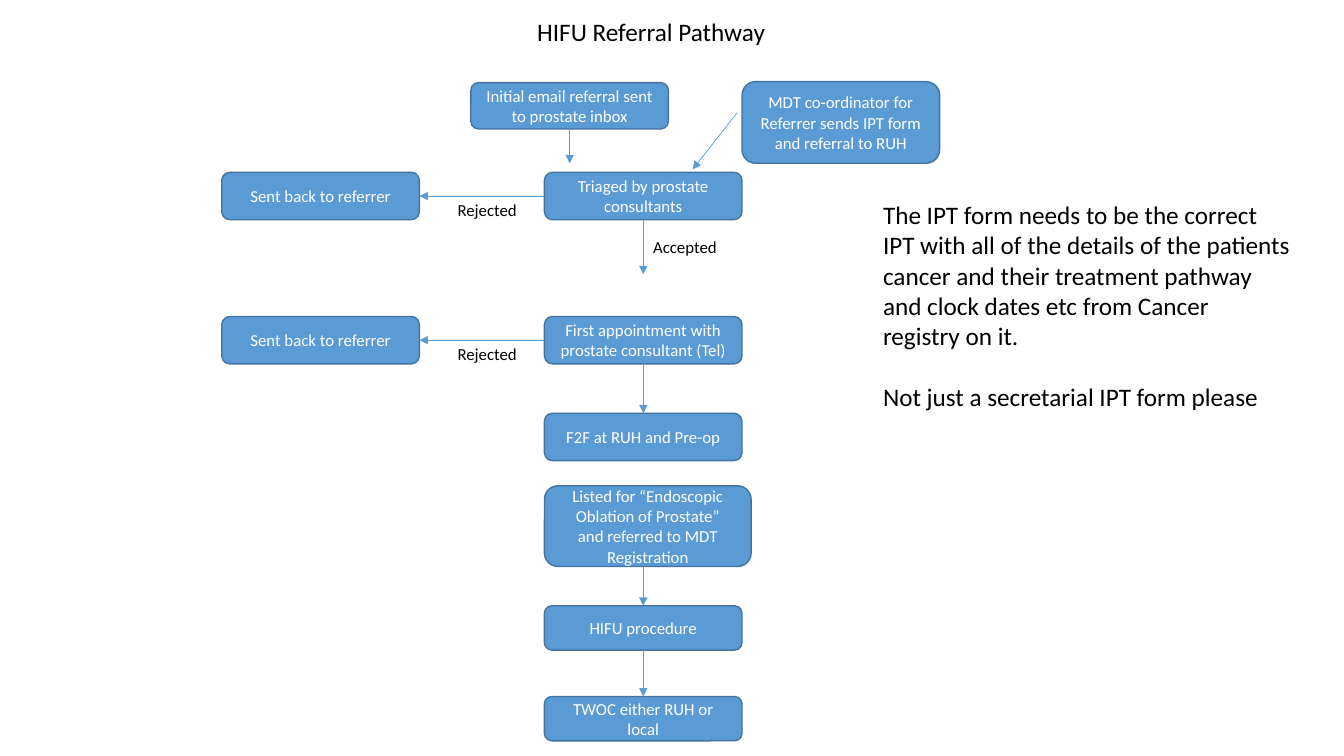
from lxml.etree import SubElement
from pptx import Presentation
from pptx.dml.color import RGBColor
from pptx.enum.shapes import MSO_CONNECTOR, MSO_SHAPE
from pptx.enum.text import MSO_ANCHOR, MSO_AUTO_SIZE, PP_ALIGN
from pptx.oxml.ns import qn
from pptx.util import Inches, Pt

BLUE = RGBColor(0x5B, 0x9B, 0xD5)
EDGE = RGBColor(0x43, 0x73, 0x9E)
WHITE = RGBColor(0xFF, 0xFF, 0xFF)
BLACK = RGBColor(0x00, 0x00, 0x00)
FONT = "Calibri"
TOP, LEFT, BOTTOM, RIGHT = range(4)
MAIN, BACK = 5.4, 2.2  # left edges of the two columns
MID = 6.38  # axis of the main column
WIDE, HIGH = 1.96, 0.47


def write(frame, text, size=12, color=BLACK, align=PP_ALIGN.LEFT, gap=0):
    """Fill a frame, one paragraph per line of text, gap points apart."""
    for i, line in enumerate(text.split("\n")):
        para = frame.add_paragraph() if i else frame.paragraphs[0]
        para.alignment = align
        if i and gap:
            para.space_before = Pt(gap)
        run = para.add_run()
        run.text = line
        run.font.name = FONT
        run.font.size = Pt(size)
        run.font.color.rgb = color


class Chart:
    """Draws the flow chart's elements on one slide."""

    def __init__(self, slide):
        self.shapes = slide.shapes

    def box(self, text, x, y, w=WIDE, h=HIGH):
        shape = self.shapes.add_shape(
            MSO_SHAPE.ROUNDED_RECTANGLE, Inches(x), Inches(y), Inches(w), Inches(h))
        shape.shadow.inherit = False
        shape.fill.solid()
        shape.fill.fore_color.rgb = BLUE
        shape.line.color.rgb = EDGE
        shape.line.width = Pt(1)
        frame = shape.text_frame
        frame.word_wrap = True
        frame.vertical_anchor = MSO_ANCHOR.MIDDLE
        write(frame, text, color=WHITE, align=PP_ALIGN.CENTER)
        return shape

    def label(self, text, x, y, w, h=0.3, wrap=False, **style):
        frame = self.shapes.add_textbox(
            Inches(x), Inches(y), Inches(w), Inches(h)).text_frame
        frame.word_wrap = wrap
        frame.auto_size = MSO_AUTO_SIZE.SHAPE_TO_FIT_TEXT
        write(frame, text, **style)

    def arrow(self, start, end):
        """Each end is a point (x, y) or a joint (shape, side)."""
        line = self.shapes.add_connector(MSO_CONNECTOR.STRAIGHT, 0, 0, 0, 0)
        if isinstance(start[0], float):
            line.begin_x, line.begin_y = map(Inches, start)
        else:
            line.begin_connect(*start)
        if isinstance(end[0], float):
            line.end_x, line.end_y = map(Inches, end)
        else:
            line.end_connect(*end)
        line.line.color.rgb = BLUE
        line.line.width = Pt(0.5)
        SubElement(line.line._get_or_add_ln(), qn("a:tailEnd"), type="triangle")
        SubElement(line._element.spPr, qn("a:effectLst"))


def main():
    deck = Presentation()
    deck.slide_width, deck.slide_height = Inches(13.33), Inches(7.5)
    chart = Chart(deck.slides.add_slide(deck.slide_layouts[6]))

    chart.label("HIFU Referral Pathway", 5.23, 0.11, 2.48, 0.4, size=18)
    email = chart.box("Initial email referral sent to prostate inbox", 4.67, 0.82, h=0.46)
    chart.box("MDT co-ordinator for Referrer sends IPT form and referral to RUH",
              7.36, 0.81, h=0.81)
    triage = chart.box("Triaged by prostate consultants", MAIN, 1.71)
    first = chart.box("First appointment with prostate consultant (Tel)", MAIN, 3.14)
    visit = chart.box("F2F at RUH and Pre-op", MAIN, 4.1)
    chart.box("Listed for “Endoscopic Oblation of Prostate”\n"
              "and referred to MDT Registration", MAIN, 4.82, 2.05, 0.8)
    hifu = chart.box("HIFU procedure", MAIN, 6.01, h=0.44)
    twoc = chart.box("TWOC either RUH or local", MAIN, 6.91, h=0.44)

    for step, y in ((triage, 1.71), (first, 3.14)):
        back = chart.box("Sent back to referrer", BACK, y)
        chart.arrow((step, LEFT), (back, RIGHT))
        chart.label("Rejected", 4.44, y + 0.22, 0.8)

    chart.arrow((email, BOTTOM), (5.65, 1.62))
    chart.arrow((7.31, 1.12), (6.87, 1.68))
    chart.arrow((triage, BOTTOM), (MID, 2.72))
    chart.label("Accepted", MID, 2.3, 0.84)
    chart.arrow((first, BOTTOM), (visit, TOP))
    chart.arrow((MID, 5.62), (hifu, TOP))
    chart.arrow((hifu, BOTTOM), (twoc, TOP))

    chart.label("The IPT form needs to be the correct IPT with all of the details of "
                "the patients cancer and their treatment pathway and clock dates etc "
                "from Cancer registry on it.\nNot just a secretarial IPT form please",
                8.66, 1.93, 4.24, 2.83, wrap=True, size=18, gap=22)
    deck.save("out.pptx")


if __name__ == "__main__":
    main()
